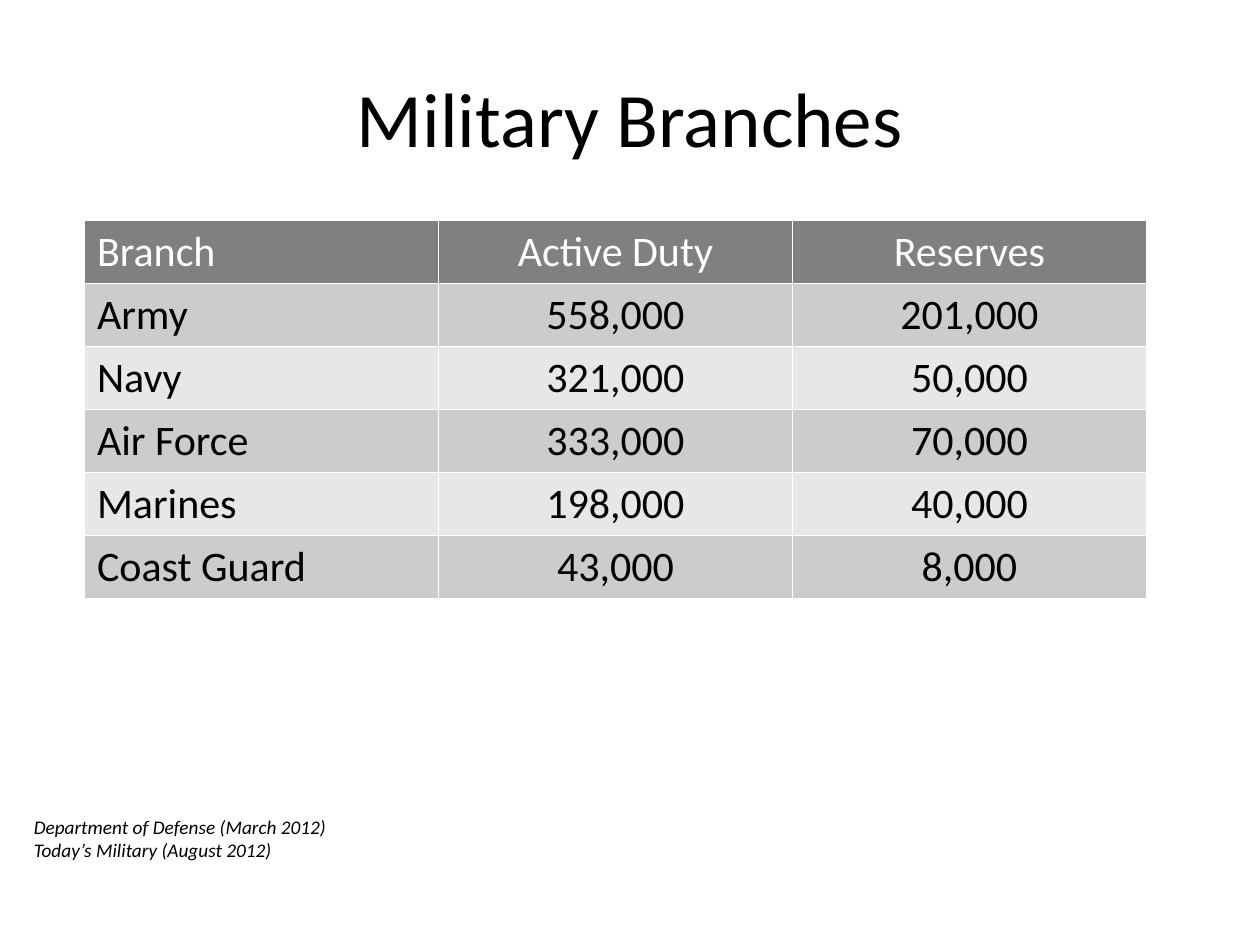
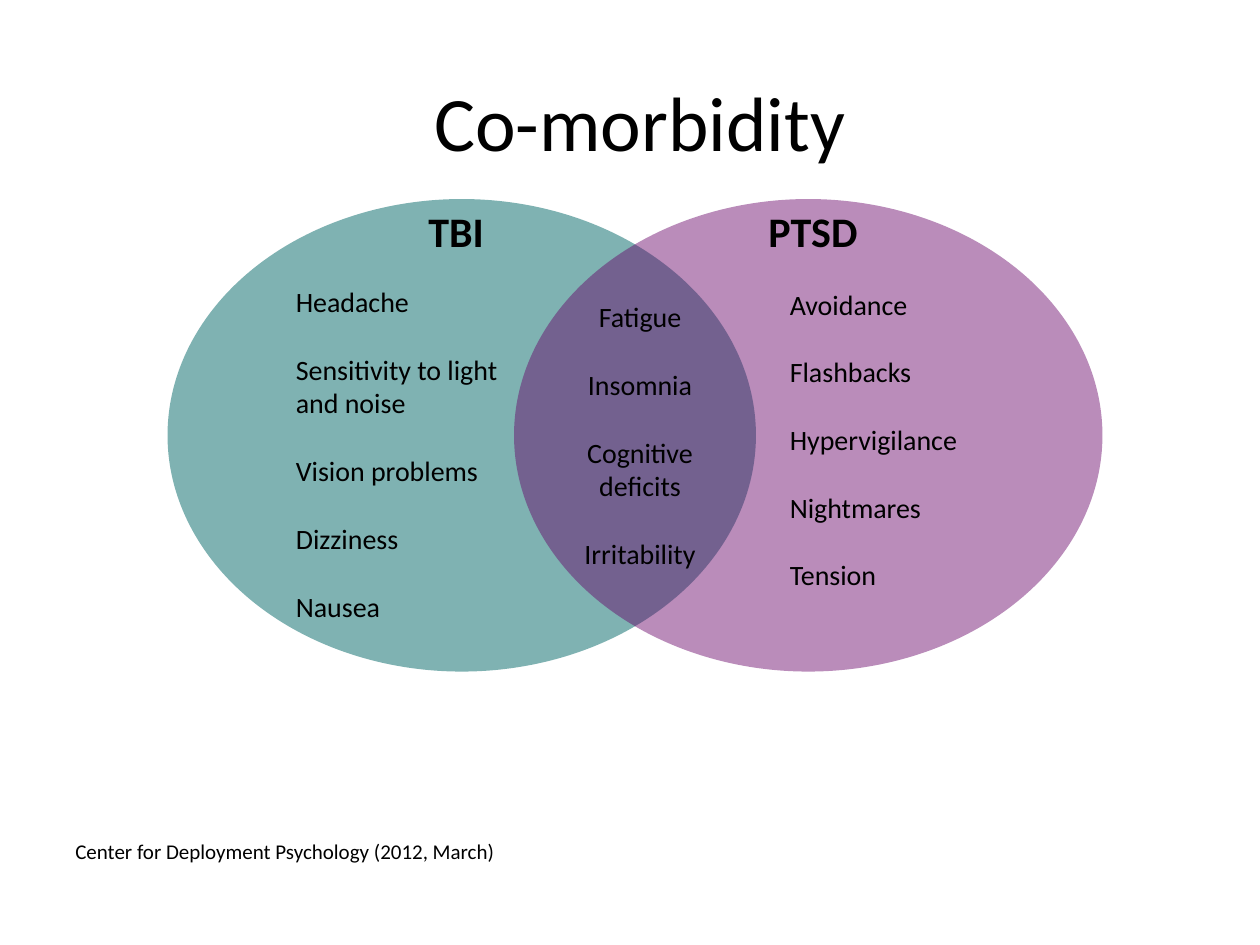
from lxml.etree import SubElement
from pptx import Presentation
from pptx.dml.color import RGBColor
from pptx.enum.shapes import MSO_SHAPE
from pptx.enum.text import MSO_ANCHOR, PP_ALIGN
from pptx.oxml.ns import qn
from pptx.util import Inches, Pt

FONT = "Calibri"
BLACK = RGBColor(0x00, 0x00, 0x00)
WHITE = RGBColor(0xFF, 0xFF, 0xFF)
HEADER_GRAY = RGBColor(0x80, 0x80, 0x80)
BAND_GRAYS = (RGBColor(0xCC, 0xCC, 0xCC), RGBColor(0xE7, 0xE7, 0xE7))
TEAL = RGBColor(0x00, 0x66, 0x66)
PURPLE = RGBColor(0x66, 0x00, 0x66)

BRANCHES = [
    ("Branch", "Active Duty", "Reserves"),
    ("Army", "558,000", "201,000"),
    ("Navy", "321,000", "50,000"),
    ("Air Force", "333,000", "70,000"),
    ("Marines", "198,000", "40,000"),
    ("Coast Guard", "43,000", "8,000"),
]
BRANCH_SOURCES = ["Department of Defense (March 2012)", "Today’s Military (August 2012)"]
COLUMN_WIDTH, ROW_HEIGHT = 2.81, 0.5

# left, colour, opacity in percent
CIRCLES = [(1.33, TEAL, 50), (4.08, PURPLE, 45)]
# name, place, alignment
CONDITIONS = [
    ("PTSD", (6, 1.58, 1.08, 0.5), PP_ALIGN.LEFT),
    ("TBI", (3.08, 1.58, 1.08, 0.5), PP_ALIGN.CENTER),
]
# symptoms, place, alignment
SYMPTOMS = [
    (["Headache", "Sensitivity to light\vand noise", "Vision problems", "Dizziness", "Nausea"],
     (2.25, 2.21, 2.33, 2.79), PP_ALIGN.LEFT),
    (["Avoidance", "Flashbacks", "Hypervigilance", "Nightmares", "Tension"],
     (6.17, 2.23, 2.33, 2.52), PP_ALIGN.LEFT),
    (["Fatigue", "Insomnia", "Cognitive deficits", "Irritability"],
     (4.33, 2.33, 1.5, 2.26), PP_ALIGN.CENTER),
]
SYMPTOM_GAP = 19.5
COMORBIDITY_SOURCES = ["Center for Deployment Psychology (2012, March)"]


def style(paragraph, size, align=PP_ALIGN.LEFT, color=BLACK, bold=False, italic=False):
    paragraph.alignment = align
    font = paragraph.font
    font.name, font.size, font.bold, font.italic = FONT, Pt(size), bold, italic
    font.color.rgb = color


def add_text(page, lines, place, size, gap=0, anchor=MSO_ANCHOR.TOP, **look):
    """Add a wrapped text box, one paragraph per line, with gap points between them."""
    frame = page.shapes.add_textbox(*map(Inches, place)).text_frame
    frame.word_wrap = True
    frame.vertical_anchor = anchor
    for number, line in enumerate(lines):
        para = frame.add_paragraph() if number else frame.paragraphs[0]
        para.text = line
        if number and gap:
            para.space_before = Pt(gap)
        style(para, size, **look)


def add_page(deck, title, left, top):
    page = deck.slides.add_slide(deck.slide_layouts[6])
    add_text(page, [title], (left, top, 9, 1.25), 44,
             anchor=MSO_ANCHOR.MIDDLE, align=PP_ALIGN.CENTER)
    return page


def add_borders(cell):
    properties = cell._tc.get_or_add_tcPr()
    for side in ("a:lnL", "a:lnR", "a:lnT", "a:lnB"):
        line = SubElement(properties, qn(side), w=str(Pt(1)))
        fill = SubElement(line, qn("a:solidFill"))
        SubElement(fill, qn("a:srgbClr"), val=str(WHITE))


def add_branch_table(page):
    rows, columns = len(BRANCHES), len(BRANCHES[0])
    table = page.shapes.add_table(
        rows, columns, Inches(0.67), Inches(1.75),
        Inches(columns * COLUMN_WIDTH), Inches(rows * ROW_HEIGHT)).table
    for column in table.columns:
        column.width = Inches(COLUMN_WIDTH)
    for r, values in enumerate(BRANCHES):
        for c, value in enumerate(values):
            cell = table.cell(r, c)
            cell.text = value
            style(cell.text_frame.paragraphs[0], 24,
                  align=PP_ALIGN.CENTER if c else PP_ALIGN.LEFT,
                  color=BLACK if r else WHITE)
            add_borders(cell)
            cell.fill.solid()
            cell.fill.fore_color.rgb = BAND_GRAYS[(r - 1) % 2] if r else HEADER_GRAY


def add_circle(page, left, color, opacity):
    circle = page.shapes.add_shape(
        MSO_SHAPE.OVAL, Inches(left), Inches(1.58), Inches(4.67), Inches(3.75))
    circle.shadow.inherit = False
    circle.line.fill.background()
    circle.fill.solid()
    circle.fill.fore_color.rgb = color
    tint = circle._element.spPr.find(qn("a:solidFill")).find(qn("a:srgbClr"))
    SubElement(tint, qn("a:alpha"), val=str(opacity * 1000))


def main():
    deck = Presentation()
    deck.slide_width, deck.slide_height = Inches(10), Inches(7.5)

    page = add_page(deck, "Military Branches", 0.5, 0.3)
    add_branch_table(page)
    add_text(page, BRANCH_SOURCES, (0.17, 6.42, 9.33, 0.47), 11, italic=True)

    page = add_page(deck, "Co-morbidity", 0.58, 0.33)
    for circle in CIRCLES:
        add_circle(page, *circle)
    for symptoms, place, align in SYMPTOMS:
        add_text(page, symptoms, place, 16, gap=SYMPTOM_GAP, align=align)
    add_text(page, COMORBIDITY_SOURCES, (0.5, 6.61, 9.33, 0.3), 12)
    for name, place, align in CONDITIONS:
        add_text(page, [name], place, 24, align=align, bold=True)

    deck.save("out.pptx")


if __name__ == "__main__":
    main()
